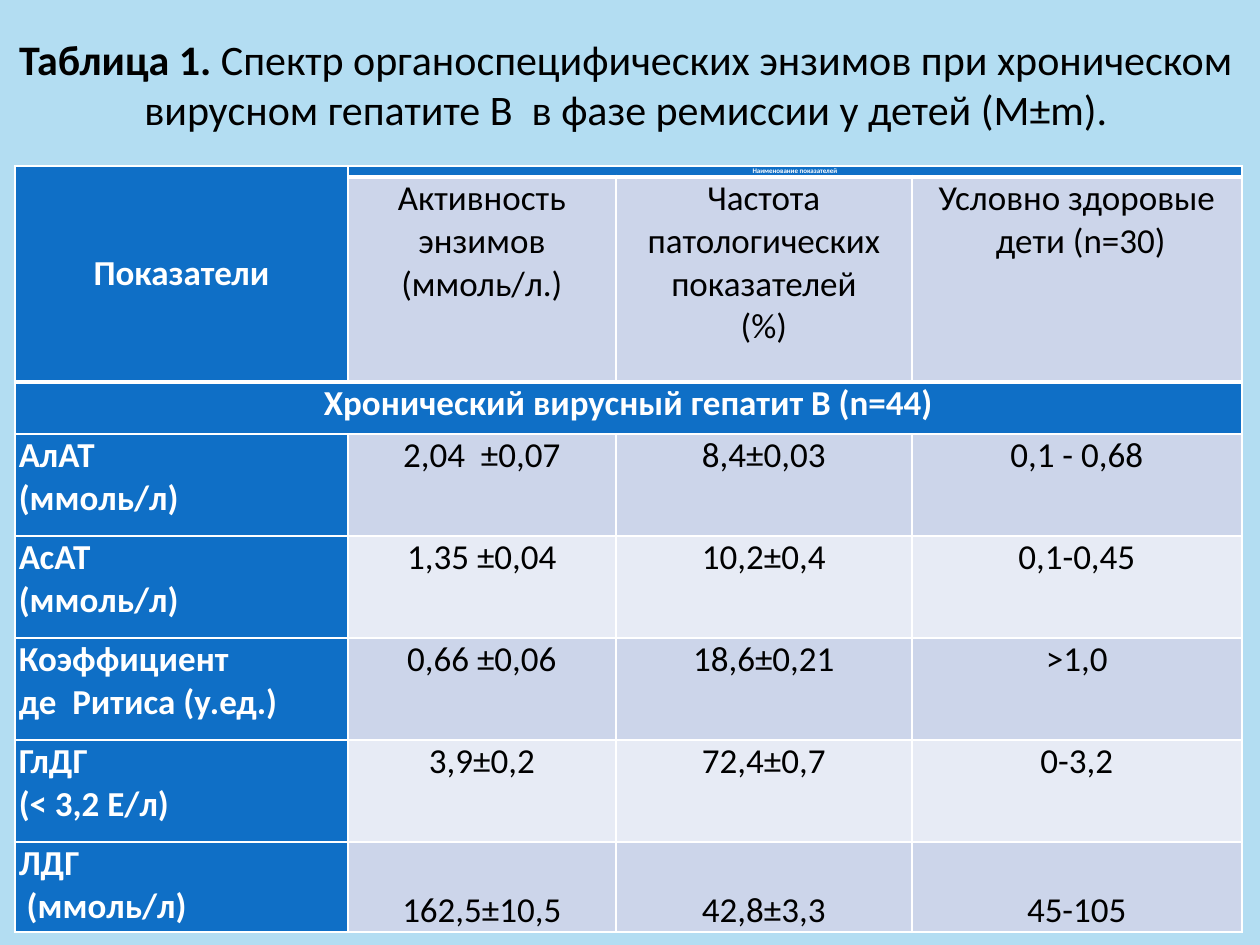
"""Builds a slide with a table of liver enzyme values."""
from lxml import etree
from pptx import Presentation
from pptx import util as u
from pptx.dml.color import RGBColor
from pptx.enum import text
from pptx.oxml import ns

PX = 914400 / 126
BLUE, PALE, LIGHT, WHITE, BLACK = "0F6FC6", "CCD5EA", "E7EBF5", "FFFFFF", "000000"
MID, LEFT = text.PP_ALIGN.CENTER, text.PP_ALIGN.LEFT


def paint(fill, tint):
    fill.solid()
    fill.fore_color.rgb = RGBColor.from_string(tint)


def style(par, size, bold, tint, align):
    par.alignment = align
    for run in par.runs:
        for key, val in {"name": "Calibri", "size": u.Pt(size), "bold": bold}.items():
            setattr(run.font, key, val)
        paint(run.font.fill, tint)


deck = Presentation()
deck.slide_width, deck.slide_height = u.Inches(10), u.Inches(7.5)
slide = deck.slides.add_slide(deck.slide_layouts[5])
paint(slide.background.fill, "B3DDF2")

title = slide.shapes.title
box = {"left": -8, "top": 26, "width": 1268, "height": 115}
for key, val in box.items():
    setattr(title, key, round(val * PX))
frame = title.text_frame
frame.word_wrap = True
frame.auto_size = text.MSO_AUTO_SIZE.SHAPE_TO_FIT_TEXT
frame.vertical_anchor = text.MSO_ANCHOR.MIDDLE
par = frame.paragraphs[0]
for words in (
    "Таблица 1. ",
    "Спектр органоспецифических энзимов при хроническом "
    "вирусном гепатите В  в фазе ремиссии у детей (М±m).",
):
    par.add_run().text = words
style(par, 24, False, BLACK, MID)
par.runs[0].font.bold = True

rows = [
    ["Показатели", "Наименование показателей", "", ""],
    ["", "Активность энзимов (ммоль/л.)",
     "Частота патологических показателей\n(%)", "Условно здоровые\n дети (n=30)"],
    ["Хронический вирусный гепатит В (n=44)", "", "", ""],
    ["АлАТ\n(ммоль/л)", "2,04  ±0,07", "8,4±0,03", "0,1 - 0,68"],
    ["АсАТ\n(ммоль/л)", "1,35 ±0,04", "10,2±0,4", "0,1-0,45"],
    ["Коэффициент\nде  Ритиса (у.ед.)", "0,66 ±0,06", "18,6±0,21", ">1,0"],
    ["ГлДГ\n(< 3,2 Е/л)", "3,9±0,2", "72,4±0,7", "0-3,2"],
    ["ЛДГ\n (ммоль/л)", "162,5±10,5", "42,8±3,3", "45-105"],
]
wide = [333, 268, 296, 330]
high = [11, 205, 52, 102, 102, 102, 102, 90]
area = [round(n * PX) for n in (15, 166, sum(wide), sum(high))]
table = slide.shapes.add_table(len(rows), len(wide), *area).table
for col, size in zip(table.columns, wide):
    col.width = round(size * PX)
for row, size in zip(table.rows, high):
    row.height = round(size * PX)
for start, end in (((0, 0), (1, 0)), ((0, 1), (0, 3)), ((2, 0), (2, 3))):
    table.cell(*start).merge(table.cell(*end))

last = len(rows) - 1
for r, row in enumerate(rows):
    for c, words in enumerate(row):
        cell = table.cell(r, c)
        head = c == 0 or r in (0, 2)
        for side in ("left", "right", "top", "bottom"):
            inset = 0.03 if side in ("left", "right") else 0
            setattr(cell, "margin_" + side, u.Inches(inset))
        thick = {"T": r in (1, 2), "B": r in (0, 1) or (r, c) == (0, 0)}
        for side in "LRTB":
            width = u.Pt(3 if thick.get(side) else 1)
            line = etree.SubElement(cell._tc.get_or_add_tcPr(), ns.qn("a:ln" + side), w=str(width))
            fill = etree.SubElement(line, ns.qn("a:solidFill"))
            etree.SubElement(fill, ns.qn("a:srgbClr"), val=WHITE)
        paint(cell.fill, BLUE if head else LIGHT if r in (4, 6) else PALE)
        if cell.is_spanned:
            continue
        cell.text = words
        if (r, c) == (0, 0):
            cell.vertical_anchor = text.MSO_ANCHOR.MIDDLE
        elif r == last and c:
            cell.vertical_anchor = text.MSO_ANCHOR.BOTTOM
        for par in cell.text_frame.paragraphs:
            tiny = r == 0 and c == 1
            style(par, 4 if tiny else 20, head, WHITE if head else BLACK,
                  LEFT if c == 0 and r > 2 else MID)
            if tiny:
                par.line_spacing = 1.15

deck.save("out.pptx")
